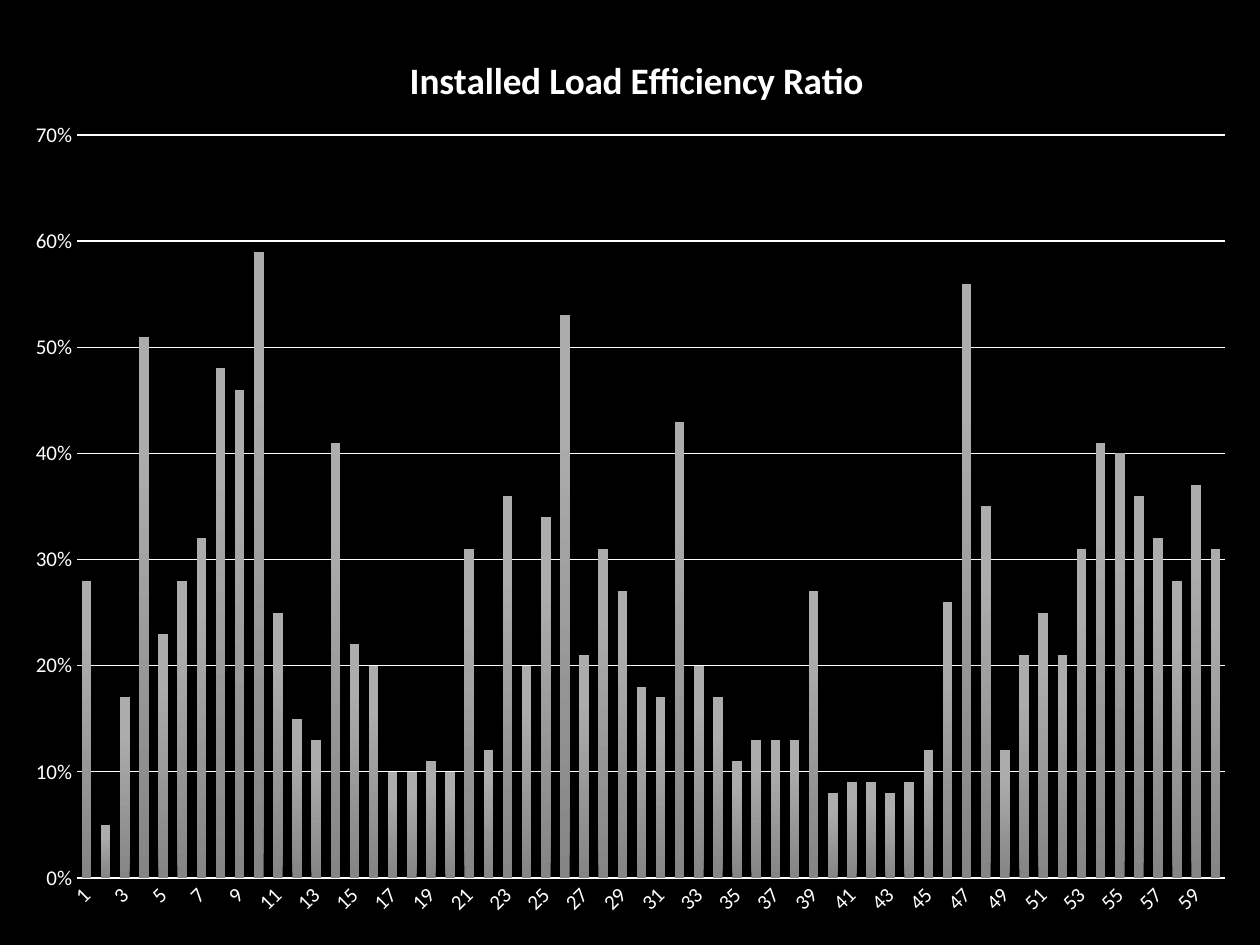
"""Build a slide with a column chart of the installed load efficiency ratio."""
from lxml import etree
from pptx import Presentation
from pptx import util as u
from pptx.chart.data import CategoryChartData
from pptx.dml.color import RGBColor
from pptx.enum import chart as kinds
from pptx.oxml.ns import qn

TITLE = "Installed Load Efficiency Ratio"
PERCENTS = [
    28, 5, 17, 51, 23, 28, 32, 48, 46, 59, 25, 15, 13, 41, 22, 20, 10, 10, 11, 10,
    31, 12, 36, 20, 34, 53, 21, 31, 27, 18, 17, 43, 20, 17, 11, 13, 13, 13, 27, 8,
    9, 9, 8, 9, 12, 26, 56, 35, 12, 21, 25, 21, 31, 41, 40, 36, 32, 28, 37, 31,
]
COLORS = {"background": "000000", "ink": "FFFFFF"}
BAR_STOPS = [(0, "858585"), (80, "ACACAC"), (100, "ADADAD")]
PAGE = (1260, 945)
FRAME = (10, 10, 1239, 924)
PLOT = (77, 135, 1148, 743)
TITLE_CORNER = (403, 48)
FONT = "Calibri"


def px(length):
    return u.Emu(round(length * 914400 / 126))


def color(name):
    return RGBColor.from_string(COLORS[name])


def style_font(font, size, bold=False):
    font.name, font.size, font.bold = FONT, u.Pt(size), bold
    font.color.rgb = color("ink")


def write_text(frame, text, **style):
    span = frame.paragraphs[0].add_run()
    span.text = text
    style_font(span.font, **style)


def style_line(line, width):
    line.color.rgb = color("ink")
    line.width = u.Pt(width)


def make_layout(left, top, width=None, height=None):
    layout = etree.Element(qn("c:layout"))
    manual = etree.SubElement(layout, qn("c:manualLayout"))
    settings = [("xMode", "edge"), ("yMode", "edge"),
                ("x", (left - FRAME[0]) / FRAME[2]), ("y", (top - FRAME[1]) / FRAME[3])]
    if width:
        settings.insert(0, ("layoutTarget", "inner"))
        settings += [("w", width / FRAME[2]), ("h", height / FRAME[3])]
    for tag, value in settings:
        etree.SubElement(manual, qn(f"c:{tag}"), val=str(value))
    return layout


def place(element, layout, index):
    for old in element.findall(qn("c:layout")):
        element.remove(old)
    element.insert(index, layout)


def shade_bars(series):
    fill = series.format.fill
    fill.gradient()
    fill.gradient_angle = 90
    stops = series.format.fill._xPr.find(".//" + qn("a:gsLst"))
    for old in list(stops):
        stops.remove(old)
    for position, value in BAR_STOPS:
        stop = etree.SubElement(stops, qn("a:gs"), pos=str(position * 1000))
        etree.SubElement(stop, qn("a:srgbClr"), val=value)


def style_axes(chart):
    category, value = chart.category_axis, chart.value_axis
    for axis in (category, value):
        axis.major_tick_mark = axis.minor_tick_mark = kinds.XL_TICK_MARK.NONE
        style_font(axis.tick_labels.font, 12)
    style_line(category.format.line, 1)
    category._element.find(qn("c:txPr")).find(qn("a:bodyPr")).set("rot", "-2700000")
    skip = etree.Element(qn("c:tickLblSkip"), val="2")
    category._element.find(qn("c:noMultiLvlLbl")).addprevious(skip)
    value.minimum_scale, value.maximum_scale, value.major_unit = 0, 0.7, 0.1
    value.tick_labels.number_format = "0%"
    value.tick_labels.number_format_is_linked = False
    value.format.line.fill.background()
    style_line(value.major_gridlines.format.line, 0.75)


def add_ratio_chart(page):
    data = CategoryChartData(number_format="0%")
    data.categories = [str(number) for number in range(1, len(PERCENTS) + 1)]
    data.add_series(TITLE, [percent / 100 for percent in PERCENTS])
    chart = page.shapes.add_chart(
        kinds.XL_CHART_TYPE.COLUMN_CLUSTERED, *map(px, FRAME), data).chart
    style_font(chart.font, 10)
    chart.has_legend = False
    chart.has_title = True
    write_text(chart.chart_title.text_frame, TITLE, size=21.3, bold=True)
    chart.chart_title.include_in_layout = False
    place(chart.chart_title._element, make_layout(*TITLE_CORNER), 1)
    bars = chart.plots[0]
    bars.gap_width, bars.overlap, bars.vary_by_categories = 100, -24, False
    shade_bars(bars.series[0])
    style_axes(chart)
    place(bars._element.getparent(), make_layout(*PLOT), 0)


def main():
    deck = Presentation()
    deck.slide_width, deck.slide_height = map(px, PAGE)
    page = deck.slides.add_slide(deck.slide_layouts[6])
    page.background.fill.solid()
    page.background.fill.fore_color.rgb = color("background")
    add_ratio_chart(page)
    deck.save("out.pptx")


if __name__ == "__main__":
    main()
